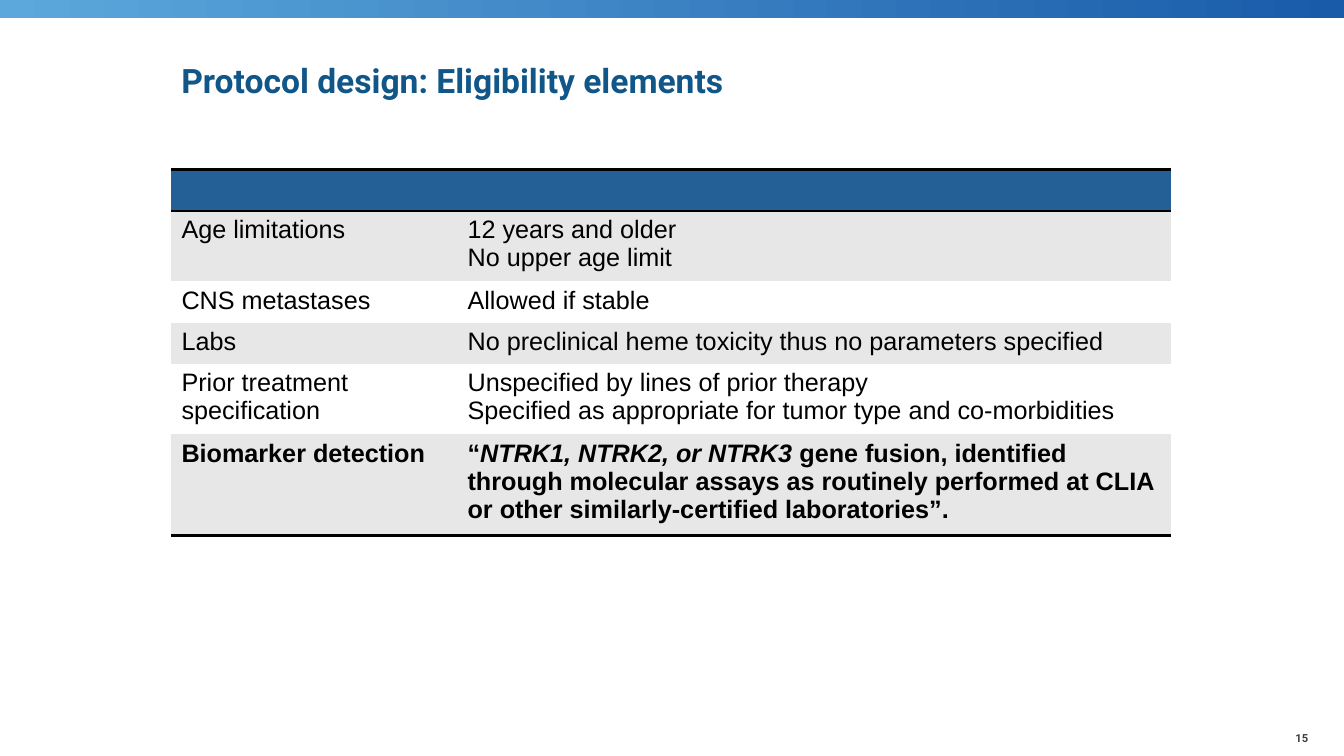
from lxml.etree import SubElement as Sub
from pptx import Presentation as Deck
from pptx.dml.color import RGBColor as Rgb
from pptx.enum.shapes import MSO_SHAPE as Shape
from pptx.enum.text import MSO_ANCHOR as Anchor, PP_ALIGN as Align
from pptx.oxml import parse_xml
from pptx.oxml.ns import qn
from pptx.util import Cm, Pt

TITLE = "Protocol design: Eligibility elements"
PAGE = "15"
ROWS = [
    ("Age limitations", ["12 years and older", "No upper age limit"]),
    ("CNS metastases", ["Allowed if stable"]),
    ("Labs", ["No preclinical heme toxicity thus no parameters specified"]),
    ("Prior treatment specification", [
        "Unspecified by lines of prior therapy",
        "Specified as appropriate for tumor type and co-morbidities"]),
    ("Biomarker detection", [[
        ("“", False),
        ("NTRK1, NTRK2, or NTRK3 ", True),
        ("gene fusion, identified through molecular assays as routinely "
         "performed at CLIA or other similarly-certified laboratories”.", False)]]),
]
WIDTHS = [7.21, 17.98]
HEIGHTS = [1.04, 1.68, 1.04, 1.04, 1.68, 2.4]
LEFT, TOP = 4.32, 4.27

THEME = {
    "bar": ("5CA8DC", "195BA9"),
    "head": "245F95",
    "bands": ("E7E7E7", "FFFFFF"),
    "rule": "000000",
    "rule_pt": 2,
    "plain": "{2D5ABB26-0587-4C30-8999-92F81FD0307C}",
    "title": {"name": "Roboto", "size": Pt(24), "bold": True, "color": "115689"},
    "page": {"name": "Roboto", "size": Pt(8), "bold": True, "color": "404040"},
    "body": {"name": "Arial", "size": Pt(18), "bold": False, "color": "000000"},
}


def style(font, form):
    for key, val in form.items():
        if key == "color":
            font.color.rgb = Rgb.from_string(val)
        else:
            setattr(font, key, val)


def write(frame, lines, form):
    for num, line in enumerate(lines):
        para = frame.add_paragraph() if num else frame.paragraphs[0]
        parts = [(line, False)] if isinstance(line, str) else line
        for text, slant in parts:
            run = para.add_run()
            run.text = text
            style(run.font, {**form, "italic": slant})


def label(slide, box, text, form, frame_form, align):
    frame = slide.shapes.add_textbox(*map(Cm, box)).text_frame
    for key, val in frame_form.items():
        setattr(frame, key, val)
    write(frame, [text], form)
    frame.paragraphs[0].alignment = align


def paint(cell, color):
    cell.fill.solid()
    cell.fill.fore_color.rgb = Rgb.from_string(color)


def edge(cell, side):
    ns = "http://schemas.openxmlformats.org/drawingml/2006/main"
    line = parse_xml(f'<a:{side} xmlns:a="{ns}" w="{Pt(THEME["rule_pt"])}"/>')
    fill = Sub(line, qn("a:solidFill"))
    Sub(fill, qn("a:srgbClr"), val=THEME["rule"])
    cell._tc.get_or_add_tcPr().insert(0, line)


def draw_bar(slide, wide):
    bar = slide.shapes.add_shape(Shape.RECTANGLE, 0, 0, wide, Cm(0.46))
    bar.shadow.inherit = False
    bar.line.fill.background()
    bar.fill.gradient()
    bar.fill.gradient_angle = 0
    for stop, color in zip(bar.fill.gradient_stops, THEME["bar"]):
        stop.color.rgb = Rgb.from_string(color)


def draw_table(slide):
    size = (LEFT, TOP, sum(WIDTHS), sum(HEIGHTS))
    table = slide.shapes.add_table(
        len(HEIGHTS), len(WIDTHS), *map(Cm, size)).table
    table.horz_banding = False
    table._tbl.tblPr.find(qn("a:tableStyleId")).text = THEME["plain"]
    for col, wide in zip(table.columns, WIDTHS):
        col.width = Cm(wide)
    for row, tall in zip(table.rows, HEIGHTS):
        row.height = Cm(tall)

    head = table.cell(0, 0)
    head.merge(table.cell(0, 1))
    for cell in table.rows[0].cells:
        paint(cell, THEME["head"])
        for side in ("lnB", "lnT"):
            edge(cell, side)

    last = len(ROWS)
    for num, (name, lines) in enumerate(ROWS, 1):
        form = {**THEME["body"], "bold": num == last}
        for cell, text in zip(table.rows[num].cells, ([name], lines)):
            paint(cell, THEME["bands"][(num - 1) % 2])
            write(cell.text_frame, text, form)
            if num == last:
                edge(cell, "lnB")


def main():
    deck = Deck()
    deck.slide_width, deck.slide_height = Cm(33.87), Cm(19.05)
    slide = deck.slides.add_slide(deck.slide_layouts[6])
    draw_bar(slide, deck.slide_width)
    label(slide, (LEFT, 0.43, 29.5, 3.18), TITLE, THEME["title"],
          {"word_wrap": True, "vertical_anchor": Anchor.MIDDLE}, Align.LEFT)
    label(slide, (32.16, 17.88, 1.3, 1.02), PAGE, THEME["page"],
          {"word_wrap": True, "vertical_anchor": Anchor.BOTTOM,
           "margin_left": 0, "margin_right": 0}, Align.CENTER)
    draw_table(slide)
    deck.save("out.pptx")


if __name__ == "__main__":
    main()
